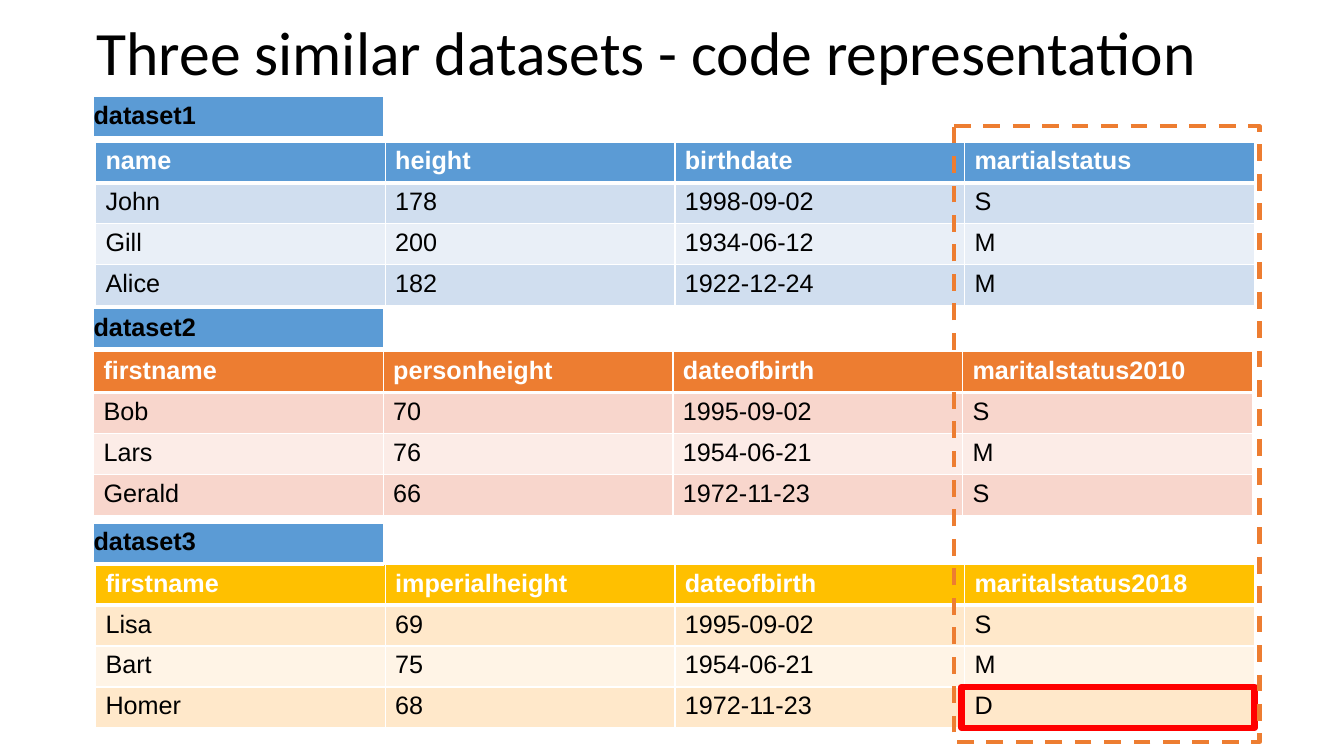
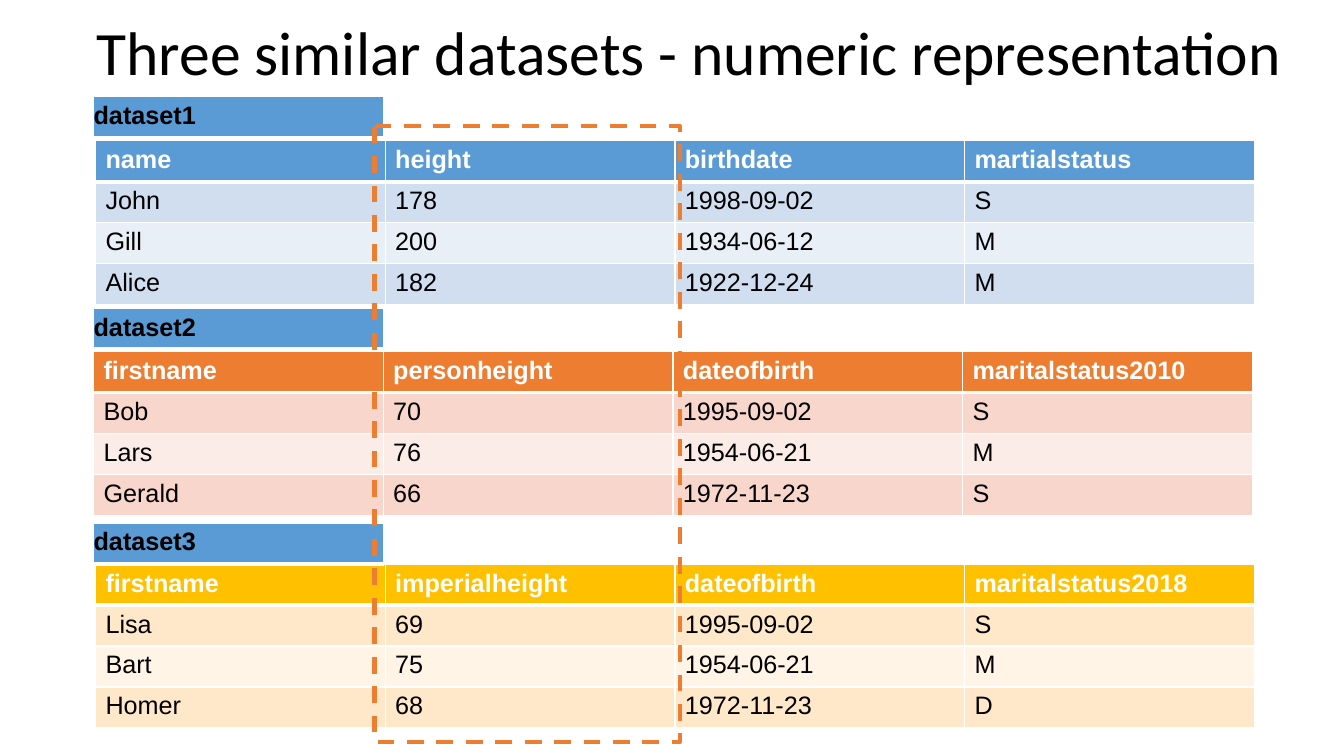
from dataclasses import dataclass

from lxml.etree import SubElement
from pptx import Presentation
from pptx.dml.color import RGBColor
from pptx.enum.dml import MSO_LINE
from pptx.enum.shapes import MSO_SHAPE
from pptx.enum.text import MSO_ANCHOR
from pptx.oxml.ns import qn
from pptx.util import Cm, Pt


@dataclass(frozen=True)
class Theme:
    title_font: str = "Calibri"
    body_font: str = "Arial"
    title_size: int = 44
    body_size: int = 18
    dark: str = "000000"
    light: str = "FFFFFF"
    label: str = "5B9BD5"
    column_frame: str = "ED7D31"
    cell_frame: str = "FF0000"
    thin: int = 1
    thick: int = 3
    heavy: float = 4.5


THEME = Theme()

DATASETS = [
    {
        "label": "dataset1",
        "label_top": 2.44,
        "left": 2.41,
        "fills": ("5B9BD5", "D0DEEF", "E9EFF7"),
        "rows": [
            ("name", "height", "birthdate", "martialstatus"),
            ("John", "178", "1998-09-02", "S"),
            ("Gill", "200", "1934-06-12", "M"),
            ("Alice", "182", "1922-12-24", "M"),
        ],
    },
    {
        "label": "dataset2",
        "label_top": 7.77,
        "left": 2.36,
        "fills": ("ED7D31", "F8D6CC", "FCECE7"),
        "rows": [
            ("firstname", "personheight", "dateofbirth", "maritalstatus2010"),
            ("Bob", "70", "1995-09-02", "S"),
            ("Lars", "76", "1954-06-21", "M"),
            ("Gerald", "66", "1972-11-23", "S"),
        ],
    },
    {
        "label": "dataset3",
        "label_top": 13.18,
        "left": 2.41,
        "fills": ("FFC000", "FFE8CA", "FFF4E6"),
        "rows": [
            ("firstname", "imperialheight", "dateofbirth", "maritalstatus2018"),
            ("Lisa", "69", "1995-09-02", "S"),
            ("Bart", "75", "1954-06-21", "M"),
            ("Homer", "68", "1972-11-23", "D"),
        ],
    },
]

SLIDES = [
    {
        "title": "Three similar datasets - code representation",
        "title_width": 29.21,
        "table_tops": (3.58, 8.86, 14.22),
        "framed_column": 3,
        "framed_last_cell": True,
    },
    {
        "title": "Three similar datasets - numeric representation",
        "title_width": 31.17,
        "table_tops": (3.55, 8.86, 14.22),
        "framed_column": 1,
        "framed_last_cell": False,
    },
]

COLUMN_WIDTH = 7.3
ROW_HEIGHT = 1.03
LABEL_LEFT = 2.36
GRID_LEFT = 2.41
FRAME_TOP = 3.18
FRAME_HEIGHT = 15.52


def rgb(color):
    return RGBColor.from_string(color)


def style_font(paragraph, name, size, color, bold=False):
    font = paragraph.font
    font.name, font.size, font.bold = name, Pt(size), bold
    font.color.rgb = rgb(color)


def set_borders(cell, top, bottom):
    properties = cell._tc.get_or_add_tcPr()
    widths = {"L": THEME.thin, "R": THEME.thin, "T": top, "B": bottom}
    for position, (side, width) in enumerate(widths.items()):
        line = SubElement(properties, qn(f"a:ln{side}"), w=str(Pt(width)))
        fill = SubElement(line, qn("a:solidFill"))
        SubElement(fill, qn("a:srgbClr"), val=THEME.light)
        properties.insert(position, line)


def add_grid(slide, rows, left, top, fills, header_color, inset=0.25):
    columns = len(rows[0])
    table = slide.shapes.add_table(
        len(rows), columns, Cm(left), Cm(top),
        Cm(COLUMN_WIDTH * columns), Cm(ROW_HEIGHT * len(rows)),
    ).table
    table.first_row = table.horz_banding = False
    for column in table.columns:
        column.width = Cm(COLUMN_WIDTH)
    for row_index, values in enumerate(rows):
        table.rows[row_index].height = Cm(ROW_HEIGHT)
        header = row_index == 0
        fill = fills[0] if header else fills[2 - row_index % 2]
        color = header_color if header else THEME.dark
        top_width = THEME.thick if row_index == 1 else THEME.thin
        bottom_width = THEME.thick if header else THEME.thin
        for column_index, value in enumerate(values):
            cell = table.cell(row_index, column_index)
            cell.text = value
            cell.margin_left = Cm(inset)
            cell.fill.solid()
            cell.fill.fore_color.rgb = rgb(fill)
            set_borders(cell, top_width, bottom_width)
            style_font(cell.text_frame.paragraphs[0], THEME.body_font,
                       THEME.body_size, color, header)


def add_title(slide, text, width):
    box = slide.shapes.add_textbox(Cm(2.18), Cm(-0.43), Cm(width), Cm(3.68))
    frame = box.text_frame
    frame.word_wrap = True
    frame.vertical_anchor = MSO_ANCHOR.MIDDLE
    paragraph = frame.paragraphs[0]
    paragraph.text = text
    paragraph.line_spacing = 0.9
    style_font(paragraph, THEME.title_font, THEME.title_size, THEME.dark)


def add_frame(slide, preset, left, top, width, height, color, weight):
    shape = slide.shapes.add_shape(preset, Cm(left), Cm(top), Cm(width), Cm(height))
    shape.shadow.inherit = False
    shape.fill.background()
    shape.line.color.rgb = rgb(color)
    shape.line.width = Pt(weight)
    return shape


def build_slide(presentation, content):
    slide = presentation.slides.add_slide(presentation.slide_layouts[6])
    add_title(slide, content["title"], content["title_width"])
    for dataset, top in zip(DATASETS, content["table_tops"]):
        add_grid(slide, dataset["rows"], dataset["left"], top,
                 dataset["fills"], THEME.light)
        add_grid(slide, [(dataset["label"],)], LABEL_LEFT, dataset["label_top"],
                 (THEME.label,), THEME.dark, inset=0)

    column_left = GRID_LEFT + content["framed_column"] * COLUMN_WIDTH
    if content["framed_last_cell"]:
        last_row_top = content["table_tops"][-1] + 3 * ROW_HEIGHT
        add_frame(slide, MSO_SHAPE.RECTANGLE, column_left - 0.08, last_row_top,
                  COLUMN_WIDTH + 0.09, ROW_HEIGHT, THEME.cell_frame, THEME.heavy)
    column_frame = add_frame(
        slide, MSO_SHAPE.ROUNDED_RECTANGLE, column_left - 0.27, FRAME_TOP,
        COLUMN_WIDTH + 0.4, FRAME_HEIGHT, THEME.column_frame, THEME.thick,
    )
    column_frame.adjustments[0] = 0
    column_frame.line.dash_style = MSO_LINE.DASH


def main():
    presentation = Presentation()
    presentation.slide_width = Cm(33.87)
    presentation.slide_height = Cm(19.05)
    for content in SLIDES:
        build_slide(presentation, content)
    presentation.save("out.pptx")


if __name__ == "__main__":
    main()
